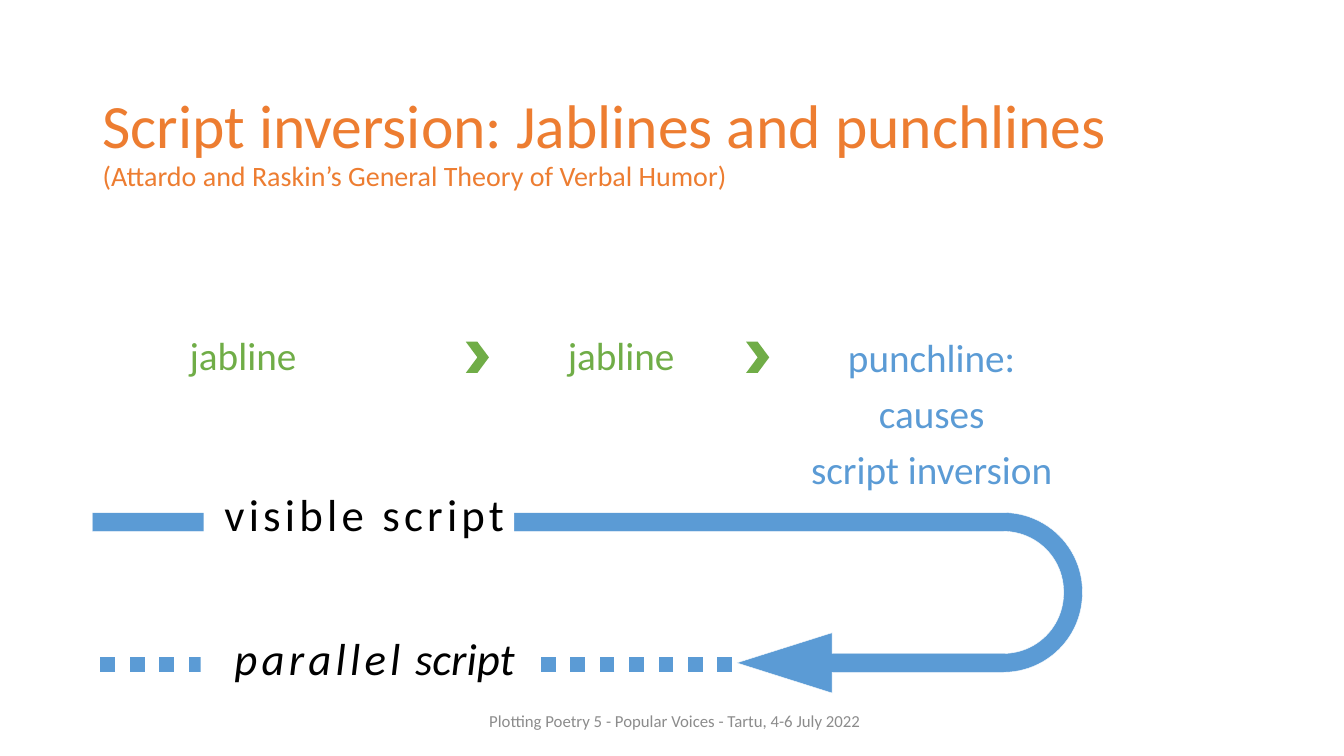
import pptx
import pptx.util
import pptx.dml.color
import pptx.enum.dml
import pptx.enum.shapes
import pptx.enum.text
import pptx.oxml.ns
import lxml.etree

Inches, Pt = pptx.util.Inches, pptx.util.Pt
Shape = pptx.enum.shapes.MSO_SHAPE
Align = pptx.enum.text.PP_ALIGN

BLUE, GREEN, ORANGE = "5B9BD5", "70AD47", "ED7D31"
WHITE, BLACK, GRAY = "FFFFFF", "000000", "8C8C8C"


def color(code):
    return pptx.dml.color.RGBColor.from_string(code)


class Board:
    font = "Calibri"

    def __init__(self, deck):
        self.slide = deck.slides.add_slide(deck.slide_layouts[6])
        self.shapes = self.slide.shapes

    def text(self, box, lines, size, ink, align=Align.CENTER, pad=(0.1, 0.05),
             lead=0.9, after=0.0):
        """Write lines in a box; pad is the left inset, then the other three."""
        item = self.shapes.add_textbox(*map(Inches, box))
        frame = item.text_frame
        frame.word_wrap = True
        frame.vertical_anchor = pptx.enum.text.MSO_ANCHOR.MIDDLE
        frame.margin_left = Inches(pad[0])
        frame.margin_right = Inches(max(pad[1], 0.05))
        frame.margin_top = frame.margin_bottom = Inches(pad[1])
        frame.text = lines
        for para in frame.paragraphs:
            para.alignment = align
            para.line_spacing = lead
            para.space_after = Pt(size * after)
            for run in para.runs:
                self.style(run, size, ink)
        return item

    def style(self, run, size, ink):
        run.font.name = self.font
        run.font.size = Pt(size)
        run.font.color.rgb = color(ink)

    def label(self, box, words, slant=False):
        """White box over a line; the first part of the words is spaced out."""
        item = self.text(box, words[0], 32, BLACK, pad=(0.17, 0.06), after=0.35)
        item.fill.solid()
        item.fill.fore_color.rgb = color(WHITE)
        para = item.text_frame.paragraphs[0]
        for word in words[1:]:
            run = para.add_run()
            run.text = word
            self.style(run, 32, BLACK)
        for run in para.runs:
            run.font.italic = slant
        para.runs[0].font._element.set("spc", "300")

    def shape(self, kind, box, fill, edge=None, turn=0, adjust=()):
        item = self.shapes.add_shape(kind, *map(Inches, box))
        item.shadow.inherit = False
        item.rotation = turn
        item.fill.solid()
        item.fill.fore_color.rgb = color(fill)
        if edge:
            item.line.color.rgb = color(edge)
            item.line.width = Pt(0.25)
        else:
            item.line.fill.background()
        for i, value in enumerate(adjust):
            item.adjustments[i] = value

    def dots(self, start, end, width, ink):
        link = self.shapes.add_connector(
            pptx.enum.shapes.MSO_CONNECTOR.STRAIGHT, *map(Inches, start + end))
        link.line.color.rgb = color(ink)
        link.line.width = Pt(width)
        link.line.dash_style = pptx.enum.dml.MSO_LINE.ROUND_DOT
        lxml.etree.SubElement(link._element.spPr,
                              pptx.oxml.ns.qn("a:effectLst"))


def main():
    deck = pptx.Presentation()
    deck.slide_width, deck.slide_height = Inches(13.33), Inches(7.5)
    board = Board(deck)

    # Parallel script: dotted line and its label
    board.dots((7.26, 6.59), (0.92, 6.59), 10.5, BLUE)
    board.label((1.99, 6.17, 3.34, 0.78), ("parallel", " script"), slant=True)

    # Visible script: turning arrow and its label
    board.shape(Shape.U_TURN_ARROW, (4.93, 1.07, 1.79, 9.82), BLUE, WHITE, 90,
                (0.104, 0.167, 0.528, 0.438, 0.349))
    board.label((2.02, 4.74, 3.08, 0.78), ("visible script",))

    # Jablines, each followed by a chevron
    for left, width, tip in ((1.45, 1.83, 4.62), (5.27, 1.69, 7.4)):
        board.text((left, 3.07, width, 0.95), "jabline", 28, GREEN,
                   pad=(0.14, 0.05), after=0.35)
        board.shape(Shape.CHEVRON, (tip, 3.39, 0.23, 0.31), GREEN)

    # Punchline
    board.text((7.26, 3.23, 3.79, 1.79), "punchline:\ncauses\nscript inversion",
               28, BLUE, pad=(0.25, 0.08), after=0.35)

    # Title and footer
    title = board.text((0.92, 0.4, 11.5, 2.06),
                       "Script inversion: Jablines and punchlines\v"
                       "(Attardo and Raskin’s General Theory of Verbal Humor)",
                       44, ORANGE, Align.LEFT)
    title.text_frame.paragraphs[0].runs[1].font.size = Pt(20)
    board.text((4.42, 6.95, 4.5, 0.4),
               "Plotting Poetry 5 - Popular Voices - Tartu, 4-6 July 2022",
               12, GRAY, lead=1.0)

    deck.save("out.pptx")


if __name__ == "__main__":
    main()
